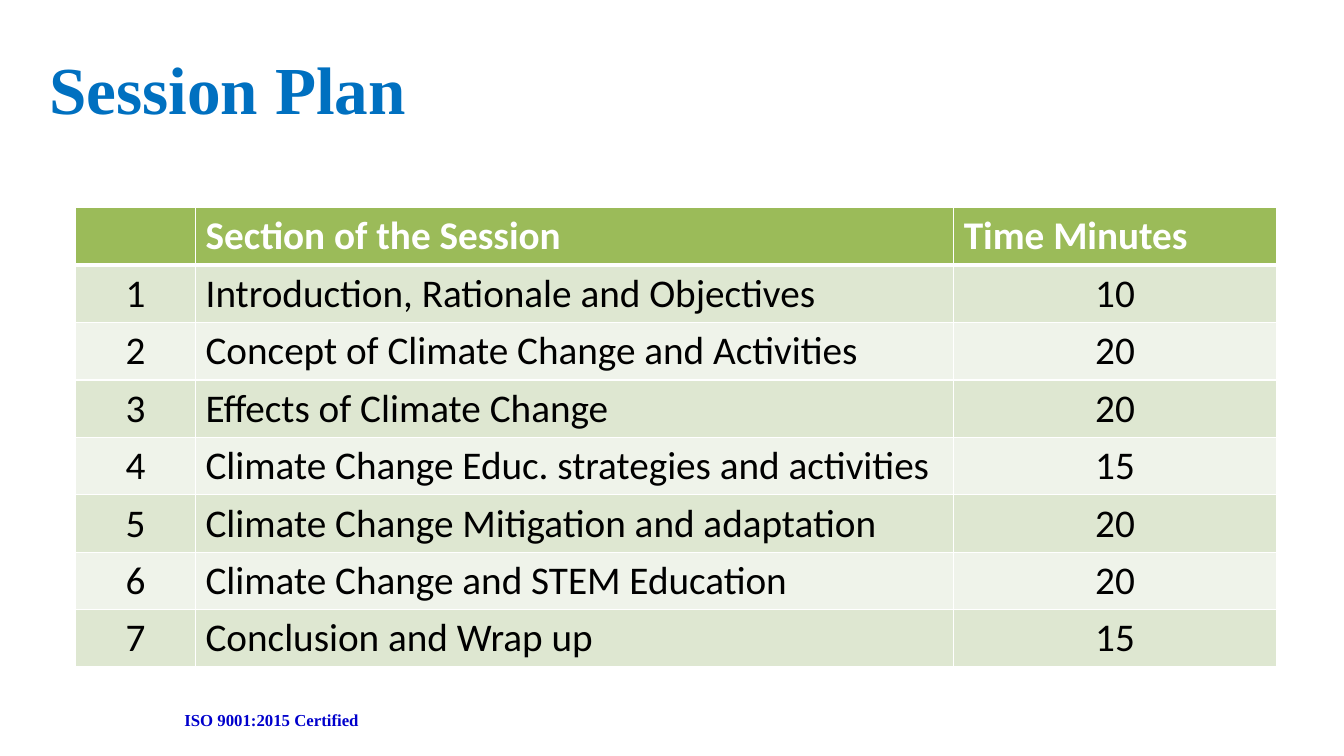
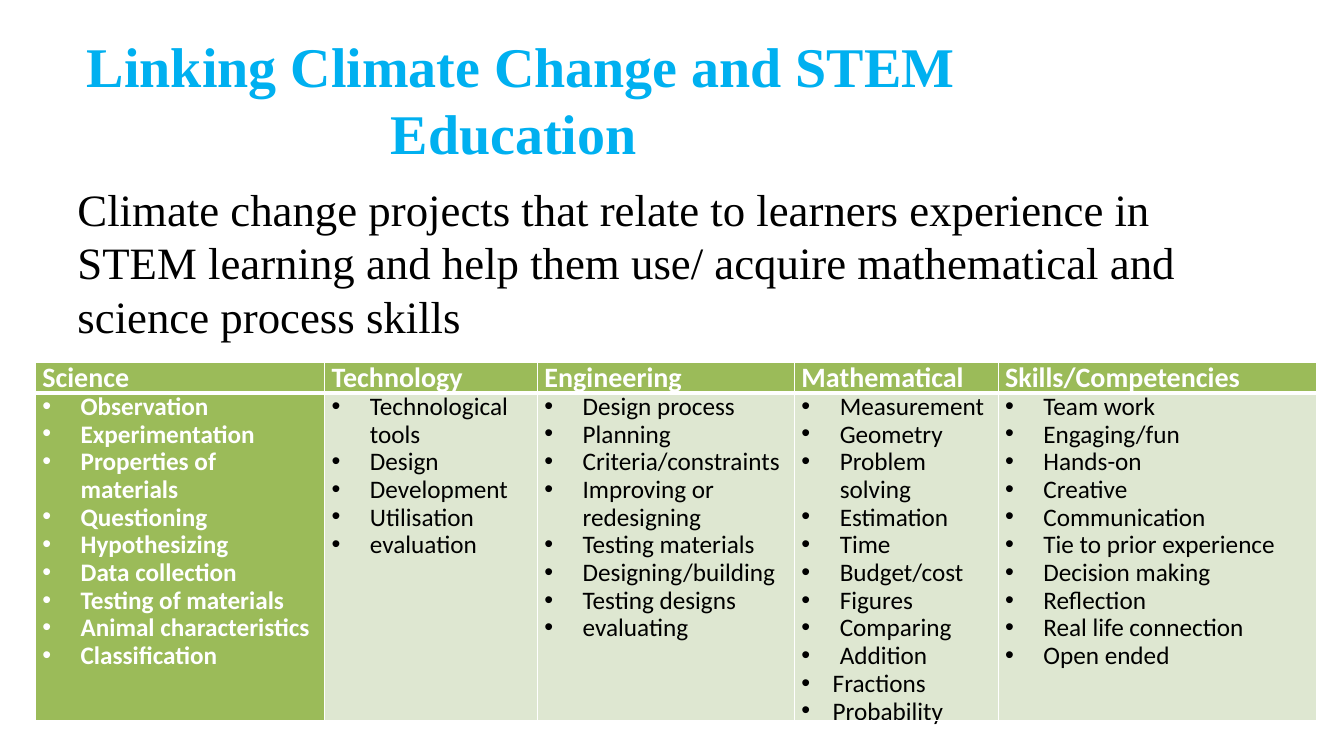
from dataclasses import dataclass

from pptx import Presentation
from pptx.dml.color import RGBColor
from pptx.enum.text import MSO_ANCHOR as Anchor, PP_ALIGN as Align
from pptx.oxml.ns import qn
from pptx.util import Inches, Pt
from lxml.etree import SubElement


@dataclass(frozen=True)
class Theme:
    serif: str = "Times New Roman"
    sans: str = "Calibri"
    plan_title: str = "0070C0"
    link_title: str = "00B0F0"
    footer: str = "0000CC"
    ink: str = "000000"
    white: str = "FFFFFF"
    green: str = "9BBB59"
    bands: tuple = ("DEE7D1", "EFF3EA")
    plan_title_size: int = 48
    link_title_size: int = 40
    intro_size: int = 32
    plan_table_size: int = 28
    link_header_size: int = 20
    link_list_size: int = 18
    footer_size: int = 12
    border: int = 1
    header_border: int = 3


THEME = Theme()

# Content
FOOTER = "ISO 9001:2015 Certified"
PLAN_TITLE = "Session Plan"
PLAN_HEADER = ("", "Section of the Session", "Time Minutes")
PLAN_WIDTHS = (1.19, 7.52, 3.2)
PLAN_SECTIONS = [
    ("Introduction, Rationale and Objectives", 10),
    ("Concept of Climate Change and Activities", 20),
    ("Effects of Climate Change", 20),
    ("Climate Change Educ. strategies and activities", 15),
    ("Climate Change Mitigation and adaptation", 20),
    ("Climate Change and STEM Education", 20),
    ("Conclusion and Wrap up", 15),
]

LINK_TITLE = "Linking Climate Change and STEM Education "
LINK_INTRO = (
    "Climate change projects that relate to learners experience in STEM learning "
    "and help them use/ acquire mathematical and science process skills"
)
LINK_WIDTHS = (2.87, 2.11, 2.55, 2.02, 3.16)
LINK_COLUMNS = {
    "Science": [
        "Observation", "Experimentation", "Properties of materials", "Questioning",
        "Hypothesizing", "Data collection", "Testing of materials",
        "Animal characteristics", "Classification",
    ],
    "Technology": [
        "Technological tools", "Design", "Development", "Utilisation", "evaluation",
    ],
    "Engineering": [
        "Design process", "Planning", "Criteria/constraints", "Improving or redesigning",
        "Testing materials", "Designing/building", "Testing designs", "evaluating",
    ],
    "Mathematical": [
        "Measurement", "Geometry", "Problem solving", "Estimation", "Time", "Budget/cost",
        "Figures", "Comparing", "Addition", "Fractions", "Probability",
    ],
    "Skills/Competencies": [
        "Team work", "Engaging/fun", "Hands-on", "Creative", "Communication",
        "Tie to prior experience", "Decision making", "Reflection",
        "Real life connection", "Open ended",
    ],
}
BULLET_INDENT = 0.38
NARROW_INDENT = 0.31
NARROW_ITEMS = {"Fractions", "Probability"}


# Text helpers
def set_font(paragraph, name, size, color, bold=False):
    font = paragraph.font
    font.name, font.size, font.bold = name, Pt(size), bold
    font.color.rgb = RGBColor.from_string(color)


def add_text(slide, box, text, size, color, bold=True, align=Align.LEFT, anchor=Anchor.TOP):
    shape = slide.shapes.add_textbox(*map(Inches, box))
    frame = shape.text_frame
    frame.word_wrap = True
    frame.vertical_anchor = anchor
    paragraph = frame.paragraphs[0]
    paragraph.text, paragraph.alignment = text, align
    set_font(paragraph, THEME.serif, size, color, bold)


def add_title(slide, box, text, size, color, align=Align.LEFT):
    add_text(slide, box, text, size, color, align=align, anchor=Anchor.MIDDLE)


def add_footer(slide):
    add_text(slide, (1.73, 6.99, 6.92, 0.3), FOOTER, THEME.footer_size, THEME.footer)


def add_bullet(paragraph, indent):
    properties = paragraph._p.get_or_add_pPr()
    properties.set("marL", str(Inches(indent)))
    properties.set("indent", str(-Inches(indent)))
    SubElement(properties, qn("a:buFont")).set("typeface", "Arial")
    SubElement(properties, qn("a:buChar")).set("char", "•")


# Table helpers
def add_table(slide, left, top, widths, heights):
    frame = slide.shapes.add_table(
        len(heights), len(widths), Inches(left), Inches(top),
        Inches(sum(widths)), Inches(sum(heights)))
    table = frame.table
    table.horz_banding = False
    for column, width in zip(table.columns, widths):
        column.width = Inches(width)
    for row, height in zip(table.rows, heights):
        row.height = Inches(height)
    return table


def style_cell(cell, row, fill):
    thick, thin = THEME.header_border, THEME.border
    widths = {
        "a:lnL": thin,
        "a:lnR": thin,
        "a:lnT": thick if row == 1 else thin,
        "a:lnB": thick if row == 0 else thin,
    }
    properties = cell._tc.get_or_add_tcPr()
    for side, width in widths.items():
        line = SubElement(properties, qn(side))
        line.set("w", str(Pt(width)))
        SubElement(SubElement(line, qn("a:solidFill")), qn("a:srgbClr")).set("val", THEME.white)
    cell.fill.solid()
    cell.fill.fore_color.rgb = RGBColor.from_string(fill)


# Slides
def build_plan(slide):
    add_footer(slide)
    add_title(slide, (0.39, 0.56, 8.77, 0.61), PLAN_TITLE,
              THEME.plan_title_size, THEME.plan_title)
    rows = [PLAN_HEADER]
    rows += [(number, *section) for number, section in enumerate(PLAN_SECTIONS, 1)]
    table = add_table(slide, 0.75, 2.06, PLAN_WIDTHS, [0.57] * len(rows))
    for r, values in enumerate(rows):
        header = r == 0
        for c, value in enumerate(values):
            cell = table.cell(r, c)
            style_cell(cell, r, THEME.green if header else THEME.bands[(r - 1) % 2])
            paragraph = cell.text_frame.paragraphs[0]
            paragraph.text = str(value)
            paragraph.alignment = Align.LEFT if header or c == 1 else Align.CENTER
            set_font(paragraph, THEME.sans, THEME.plan_table_size,
                     THEME.white if header else THEME.ink, header)


def build_link(slide):
    add_title(slide, (0.58, 0.35, 9.17, 1.25), LINK_TITLE,
              THEME.link_title_size, THEME.link_title, Align.CENTER)
    add_text(slide, (0.67, 1.75, 12, 1.77), LINK_INTRO,
             THEME.intro_size, THEME.ink, bold=False)
    table = add_table(slide, 0.35, 3.6, LINK_WIDTHS, (0.3, 3.25))
    table.first_col = True
    for c, (heading, items) in enumerate(LINK_COLUMNS.items()):
        for r, lines in enumerate(([heading], items)):
            cell = table.cell(r, c)
            strong = r == 0 or c == 0
            style_cell(cell, r, THEME.green if strong else THEME.bands[0])
            cell.margin_left = cell.margin_right = Inches(0.07)
            cell.margin_top = cell.margin_bottom = 0
            frame = cell.text_frame
            frame.text = "\n".join(lines)
            for paragraph, text in zip(frame.paragraphs, lines):
                paragraph.line_spacing = 0.9
                if r == 1:
                    add_bullet(paragraph, NARROW_INDENT if text in NARROW_ITEMS else BULLET_INDENT)
                set_font(paragraph, THEME.sans,
                         THEME.link_list_size if r else THEME.link_header_size,
                         THEME.white if strong else THEME.ink, strong)


def main():
    presentation = Presentation()
    presentation.slide_width, presentation.slide_height = Inches(13.33), Inches(7.5)
    blank = presentation.slide_layouts[6]
    for build in (build_plan, build_link):
        build(presentation.slides.add_slide(blank))
    presentation.save("out.pptx")


if __name__ == "__main__":
    main()
